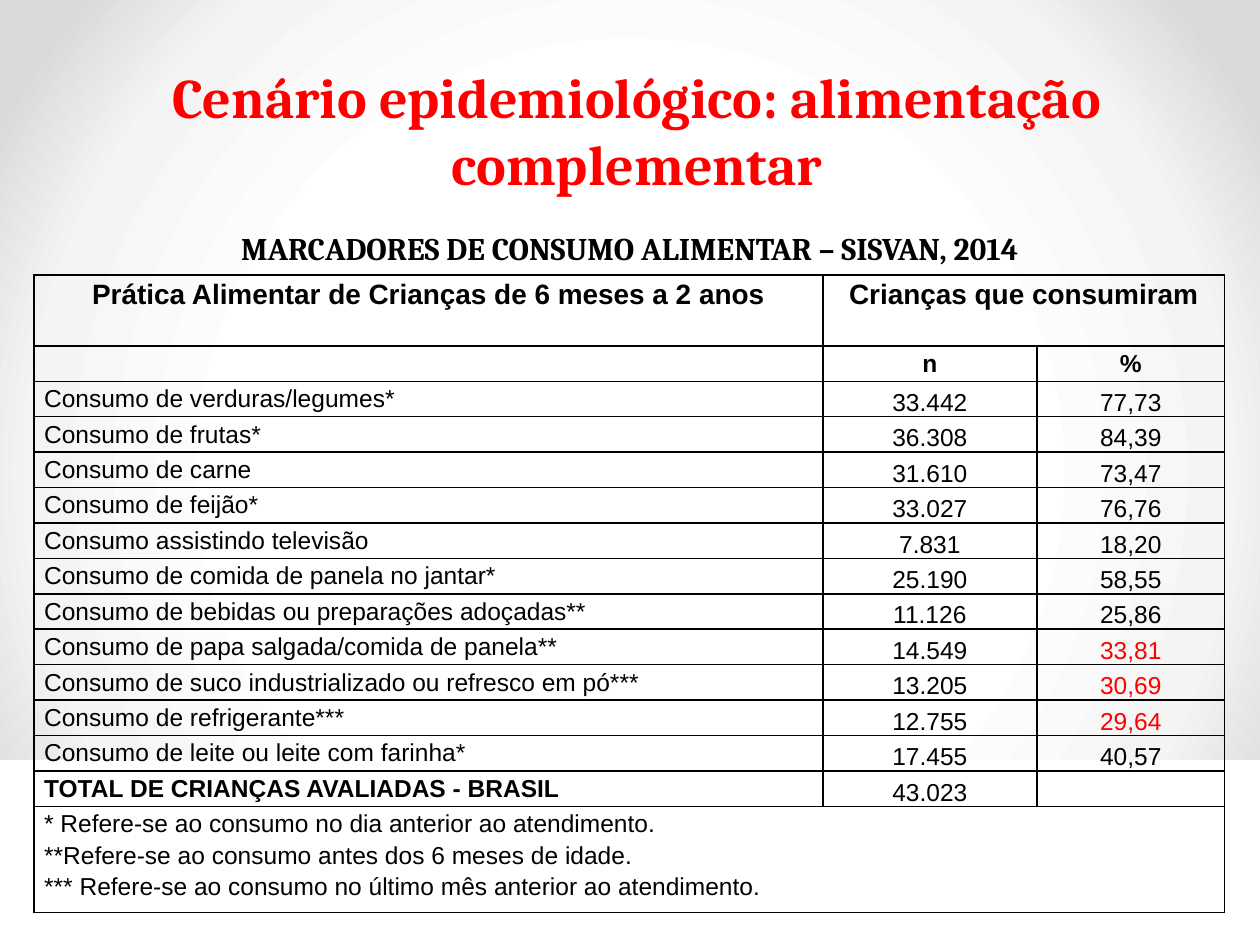
from dataclasses import dataclass
from typing import NamedTuple

from lxml import etree
from pptx import Presentation
from pptx.dml.color import RGBColor
from pptx.enum.shapes import MSO_SHAPE
from pptx.enum.text import MSO_ANCHOR, MSO_AUTO_SIZE, PP_ALIGN
from pptx.oxml import parse_xml
from pptx.oxml.ns import nsdecls, qn
from pptx.util import Inches, Pt

LEFT, CENTER = PP_ALIGN.LEFT, PP_ALIGN.CENTER
TOP, BOTTOM = MSO_ANCHOR.TOP, MSO_ANCHOR.BOTTOM
FIXED = MSO_AUTO_SIZE.NONE
RECT = MSO_SHAPE.RECTANGLE

BLACK = RGBColor(0, 0, 0)
RED = RGBColor(255, 0, 0)
WHITE = RGBColor(255, 255, 255)

WIDE, HIGH = 10, 7.5
UNIT = 5.06 / 18
COLS = (6.26, 1.7, 1.49)
STOPS = ((0, WHITE), (50, WHITE), (76, RGBColor(0xF4, 0xF4, 0xF4)),
         (92, RGBColor(0xDA, 0xDA, 0xDA)), (100, RGBColor(0xDA, 0xDA, 0xDA)))


class Box(NamedTuple):
    left: float
    top: float
    width: float
    height: float

    def place(self) -> tuple:
        return (Inches(self.left * WIDE), Inches(self.top * HIGH),
                Inches(self.width * WIDE), Inches(self.height * HIGH))


class Style(NamedTuple):
    size: int = 14
    bold: bool = False
    color: RGBColor = BLACK
    font: str = "Arial"
    align: int = LEFT
    space: float = 1.15


@dataclass
class Food:
    name: str
    count: str
    share: str
    color: RGBColor = BLACK


FLOOR = Box(0, 0.804, 1, 0.216)
GRID = Box(0.027, 0.291, 0.945, 0.675)
LABEL = Box(0.043, 0.236, 0.914, 0.053)
TITLE = Box(0.033, 0.059, 0.945, 0.157)

NAME = Style()
HEAD = Style(size=16, bold=True, align=CENTER)
SUB = HEAD._replace(size=14)
DATA = Style(align=CENTER, space=1)

FOODS = (
    Food("Consumo de verduras/legumes*", "33.442", "77,73"),
    Food("Consumo de frutas*", "36.308", "84,39"),
    Food("Consumo de carne", "31.610", "73,47"),
    Food("Consumo de feijão*", "33.027", "76,76"),
    Food("Consumo assistindo televisão", "7.831", "18,20"),
    Food("Consumo de comida de panela no jantar*", "25.190", "58,55"),
    Food("Consumo de bebidas ou preparações adoçadas**", "11.126", "25,86"),
    Food("Consumo de papa salgada/comida de panela**", "14.549", "33,81", RED),
    Food("Consumo de suco industrializado ou refresco em pó***", "13.205", "30,69", RED),
    Food("Consumo de refrigerante***", "12.755", "29,64", RED),
    Food("Consumo de leite ou leite com farinha*", "17.455", "40,57"),
)
NOTES = (
    "* Refere-se ao consumo no dia anterior ao atendimento.",
    "**Refere-se ao consumo antes dos 6 meses de idade.",
    "*** Refere-se ao consumo no último mês anterior ao atendimento.",
)


def write(frame, lines: tuple, style: Style) -> None:
    for i, line in enumerate(lines):
        para = frame.paragraphs[0] if i == 0 else frame.add_paragraph()
        para.alignment = style.align
        para.line_spacing = style.space
        run = para.add_run()
        run.text = line
        run.font.size = Pt(style.size)
        run.font.bold = style.bold
        run.font.name = style.font
        run.font.color.rgb = style.color


def shade(run) -> None:
    fill = run.font._element.find(qn("a:solidFill"))
    fill.addnext(parse_xml(
        f'<a:effectLst {nsdecls("a")}><a:outerShdw blurRad="38100" dist="38100" '
        'dir="2700000" algn="tl"><a:srgbClr val="000000"><a:alpha val="43000"/>'
        '</a:srgbClr></a:outerShdw></a:effectLst>'))


def paint(slide) -> None:
    slide.background.fill.gradient()
    old = slide.element.find(".//" + qn("a:gradFill"))
    stops = "".join(f'<a:gs pos="{pos * 1000}"><a:srgbClr val="{color}"/></a:gs>'
                    for pos, color in STOPS)
    old.getparent().replace(old, parse_xml(
        f'<a:gradFill {nsdecls("a")} rotWithShape="1"><a:gsLst>{stops}</a:gsLst>'
        '<a:path path="circle"><a:fillToRect l="50000" t="50000" r="50000" b="50000"/>'
        '</a:path></a:gradFill>'))


def frame_cell(cell) -> None:
    props = cell._tc.get_or_add_tcPr()
    for side in "LRTB":
        props.append(parse_xml(
            f'<a:ln{side} {nsdecls("a")} w="12700"><a:solidFill>'
            f'<a:srgbClr val="{BLACK}"/></a:solidFill></a:ln{side}>'))
    cell.fill.background()
    cell.margin_left = cell.margin_right = Inches(0.08)
    cell.margin_top = cell.margin_bottom = 0


def put(cell, lines: tuple, style: Style) -> None:
    write(cell.text_frame, lines, style)
    if style == DATA._replace(color=style.color):
        cell.vertical_anchor = BOTTOM
        cell.margin_left = cell.margin_right = cell.margin_top = Inches(0.01)


def blank(cell) -> None:
    para = cell.text_frame.paragraphs[0]
    etree.SubElement(para._p, qn("a:endParaRPr"), sz="1400")


def add_grid(slide) -> None:
    units = (2,) + (1,) * (len(FOODS) + 2) + (3,)
    table = slide.shapes.add_table(len(units), len(COLS), *GRID.place()).table
    table.first_row = table.horz_banding = False
    for col, width in zip(table.columns, COLS):
        col.width = Inches(width)
    for row, count in zip(table.rows, units):
        row.height = Inches(count * UNIT)
    for cell in table.iter_cells():
        frame_cell(cell)

    last = len(units) - 1
    table.cell(0, 1).merge(table.cell(0, 2))
    table.cell(last, 0).merge(table.cell(last, 2))
    put(table.cell(0, 0), ("Prática Alimentar de Crianças de 6 meses a 2 anos",), HEAD)
    put(table.cell(0, 1), ("Crianças que consumiram",), HEAD)
    blank(table.cell(1, 0))
    put(table.cell(1, 1), ("n",), SUB)
    put(table.cell(1, 2), ("%",), SUB)
    for i, food in enumerate(FOODS, 2):
        put(table.cell(i, 0), (food.name,), NAME)
        put(table.cell(i, 1), (food.count,), DATA)
        put(table.cell(i, 2), (food.share,), DATA._replace(color=food.color))
    put(table.cell(last - 1, 0), ("TOTAL DE CRIANÇAS AVALIADAS - BRASIL",),
        NAME._replace(bold=True))
    put(table.cell(last - 1, 1), ("43.023",), DATA)
    blank(table.cell(last - 1, 2))
    put(table.cell(last, 0), NOTES, NAME)


def add_title(slide) -> None:
    title = slide.shapes.title
    title.left, title.top, title.width, title.height = TITLE.place()
    frame = title.text_frame
    frame.auto_size = FIXED
    frame.vertical_anchor = TOP
    write(frame, ("Cenário epidemiológico: alimentação complementar",),
          Style(32, True, RED, "Cambria", CENTER, 1))
    shade(frame.paragraphs[0].runs[0])


def main() -> None:
    deck = Presentation()
    deck.slide_width, deck.slide_height = Inches(WIDE), Inches(HIGH)
    slide = deck.slides.add_slide(deck.slide_layouts[5])
    paint(slide)
    floor = slide.shapes.add_shape(RECT, *FLOOR.place())
    floor.shadow.inherit = False
    floor.fill.solid()
    floor.fill.fore_color.rgb = WHITE
    floor.line.fill.background()
    add_grid(slide)
    label = slide.shapes.add_textbox(*LABEL.place()).text_frame
    label.word_wrap = True
    write(label, ("MARCADORES DE CONSUMO ALIMENTAR – SISVAN, 2014",),
          Style(18, True, BLACK, "Cambria", CENTER, 1))
    add_title(slide)
    deck.save("out.pptx")


if __name__ == "__main__":
    main()
